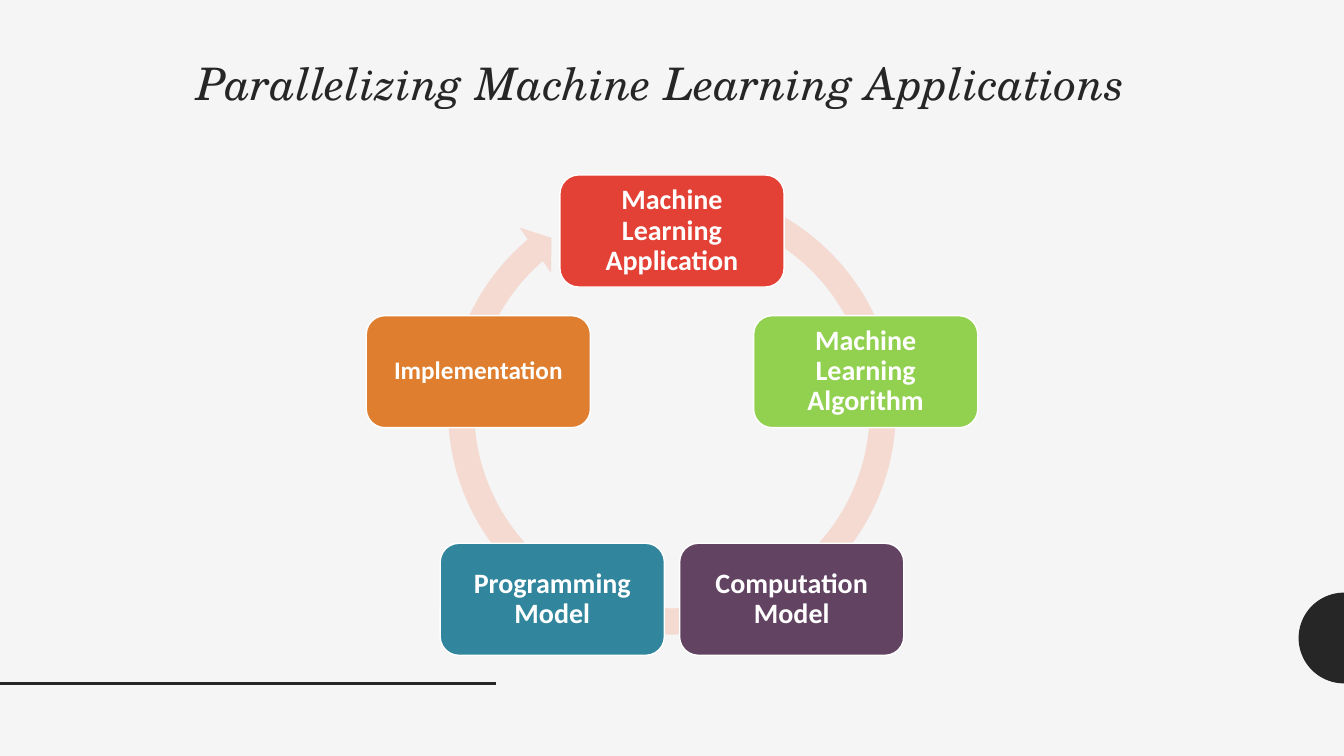
import math

import pptx
import pptx.dml.color
import pptx.enum.shapes
import pptx.enum.text
import pptx.oxml.ns
import pptx.util
from lxml import etree

In, Pt = pptx.util.Inches, pptx.util.Pt
SHAPE = pptx.enum.shapes.MSO_SHAPE
ANCHOR = pptx.enum.text.MSO_ANCHOR
ALIGN = pptx.enum.text.PP_ALIGN
WIDTH, HEIGHT = 13.33, 7.5
INK = "262626"

STEPS = [
    ("Machine Learning Application", "E34135", 20),
    ("Machine Learning Algorithm", "92D050", 20),
    ("Computation Model", "624462", 20),
    ("Programming Model", "31859C", 20),
    ("Implementation", "DE7E2E", 18),
]


def rgb(value):
    return pptx.dml.color.RGBColor.from_string(value)


def paint(sp, fill, line=None):
    sp.shadow.inherit = False
    sp.fill.solid()
    sp.fill.fore_color.rgb = rgb(fill)
    if line:
        sp.line.color.rgb = rgb(line)
        sp.line.width = Pt(1)
    else:
        sp.line.fill.background()


def add_run(p, text, size, color, font="Calibri", bold=False, italic=False):
    r = p.add_run()
    r.text = text
    r.font.size, r.font.name = Pt(size), font
    r.font.bold, r.font.italic = bold, italic
    r.font.color.rgb = rgb(color)


def add_title(s, left, top, width, height):
    title = s.shapes.title
    title.left, title.top = In(left), In(top)
    title.width, title.height = In(width), In(height)
    tf = title.text_frame
    tf.word_wrap = True
    tf.vertical_anchor = ANCHOR.TOP
    p = tf.paragraphs[0]
    p.alignment, p.line_spacing = ALIGN.LEFT, 0.9
    add_run(p, "Parallelizing Machine Learning Applications", 32, INK,
            font="TeX Gyre Schola", italic=True)


def add_step(s, center_x, center_y, width, text, color, size):
    height = width / 2
    sp = s.shapes.add_shape(SHAPE.ROUNDED_RECTANGLE, In(center_x - width / 2),
                            In(center_y - height / 2), In(width), In(height))
    paint(sp, color, "FFFFFF")
    tf = sp.text_frame
    tf.word_wrap = True
    tf.vertical_anchor = ANCHOR.MIDDLE
    tf.margin_left = tf.margin_right = tf.margin_top = tf.margin_bottom = In(0.08)
    p = tf.paragraphs[0]
    p.alignment, p.line_spacing = ALIGN.CENTER, 0.9
    add_run(p, text, size, "FFFFFF", bold=True)


def add_cycle(s, left, top, side):
    # Ring with arrowhead
    ring = s.shapes.add_shape(SHAPE.CIRCULAR_ARROW, In(left), In(top), In(side), In(side))
    for i, value in enumerate([0.055, 3.307, 137.758, 173.86, 0.058]):
        ring.adjustments[i] = value
    paint(ring, "F4DAD1")
    # Steps at equal angles, clockwise from the top
    center_x, center_y = left + side / 2, top + side * 0.55
    radius, box_width = side * 0.427, side * 0.47
    for i, (text, color, size) in enumerate(STEPS):
        angle = math.tau * i / len(STEPS)
        add_step(s, center_x + radius * math.sin(angle),
                 center_y - radius * math.cos(angle), box_width, text, color, size)


def add_rule(s, left, y, width):
    line = s.shapes.add_connector(pptx.enum.shapes.MSO_CONNECTOR.STRAIGHT,
                                  In(left), In(y), In(left + width), In(y))
    line.line.color.rgb = rgb(INK)
    line.line.width = Pt(2)
    etree.SubElement(line._element.spPr, pptx.oxml.ns.qn("a:effectLst"))


def add_half_disc(s, right, center_y, radius, segments=48):
    angles = [math.pi * (0.5 + i / segments) for i in range(segments + 1)]
    points = [(In(right + radius * math.cos(a)), In(center_y + radius * math.sin(a)))
              for a in angles]
    builder = s.shapes.build_freeform(*points[0])
    builder.add_line_segments(points[1:], close=True)
    paint(builder.convert_to_shape(), INK)


def main():
    prs = pptx.Presentation()
    prs.slide_width, prs.slide_height = In(WIDTH), In(HEIGHT)
    s = prs.slides.add_slide(prs.slide_layouts[5])
    s.background.fill.solid()
    s.background.fill.fore_color.rgb = rgb("F5F5F5")

    add_rule(s, 0, 6.78, 4.92)
    add_title(s, 1.85, 0.56, 9.79, 0.76)
    add_cycle(s, 4.3, 1.71, 4.73)
    add_half_disc(s, WIDTH, 6.33, 0.45)
    prs.save("out.pptx")


if __name__ == "__main__":
    main()
